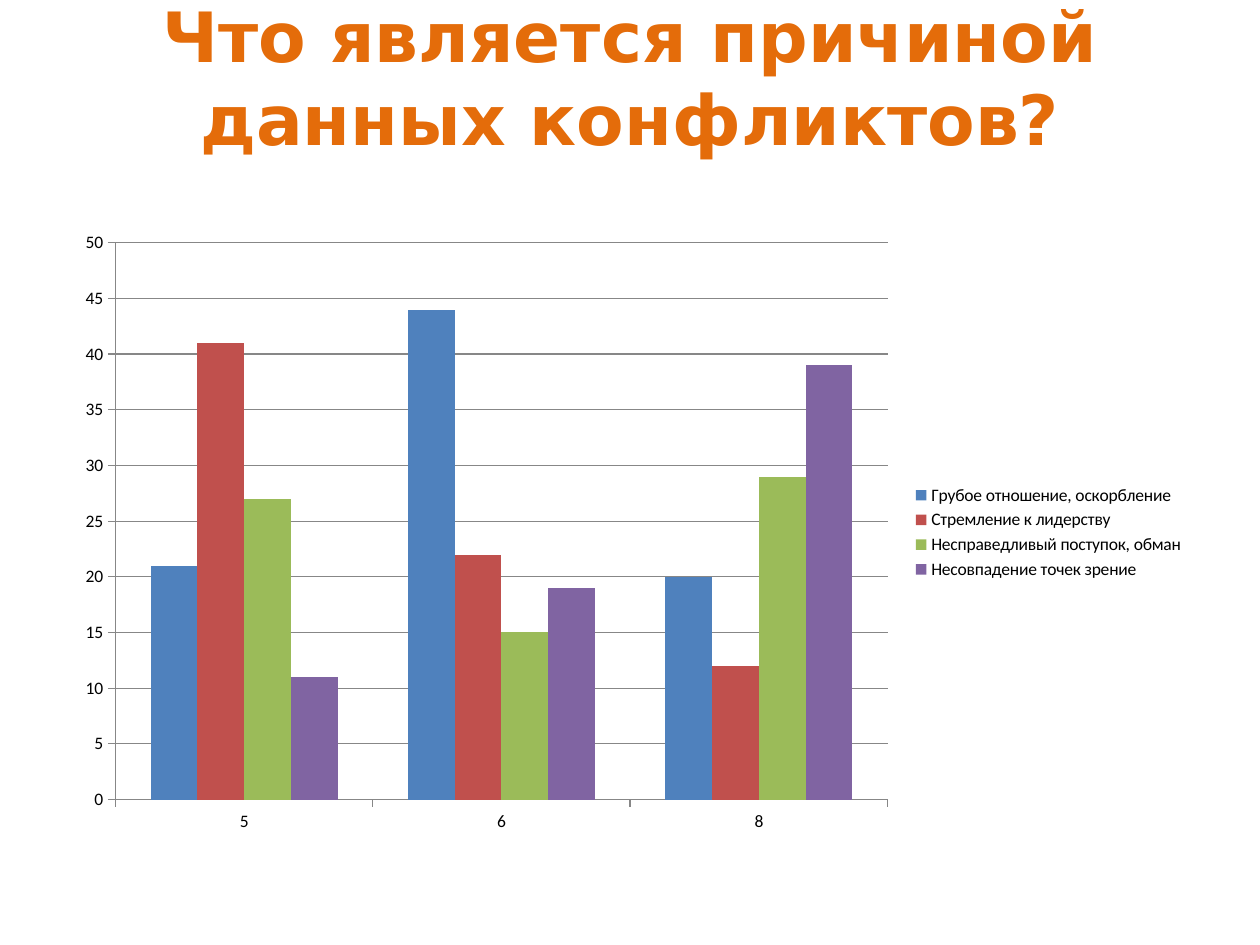
from pptx import Presentation
from pptx.chart.data import CategoryChartData
from pptx.dml.color import RGBColor
from pptx.enum.chart import XL_CHART_TYPE as CT, XL_LEGEND_POSITION as LP, XL_TICK_MARK as TM
from pptx.enum.text import MSO_ANCHOR as MA, PP_ALIGN as PA
from pptx.util import Pt


def rgb(value):
    return RGBColor.from_string(value)


def apply(obj, fmt):
    for name, value in fmt.items():
        setattr(obj, name, value)


class Deck:
    title_font = {"name": "DejaVu Sans", "size": Pt(39.6), "bold": True}
    chart_font = {"name": "Calibri", "size": Pt(10), "bold": False}
    title_color = "E46C0A"
    text_color = "000000"
    line_color = "878787"

    def __init__(self, width, height):
        self.prs = Presentation()
        apply(self.prs, {"slide_width": Pt(width), "slide_height": Pt(height)})
        self.s = self.prs.slides.add_slide(self.prs.slide_layouts[6])

    def title(self, text, box):
        tf = self.s.shapes.add_textbox(*map(Pt, box)).text_frame
        apply(tf, {"word_wrap": True, "vertical_anchor": MA.MIDDLE,
                   "margin_bottom": Pt(50)})
        p = tf.paragraphs[0]
        p.alignment = PA.CENTER
        r = p.add_run()
        r.text = text
        apply(r.font, self.title_font)
        r.font.color.rgb = rgb(self.title_color)

    def line(self, fmt):
        fmt.line.width = Pt(0.75)
        fmt.line.color.rgb = rgb(self.line_color)

    def columns(self, cats, series, box):
        data = CategoryChartData()
        data.categories = cats
        for name, _, values in series:
            data.add_series(name, values)
        chart = self.s.shapes.add_chart(CT.COLUMN_CLUSTERED, *map(Pt, box), data).chart
        apply(chart, {"has_title": False, "has_legend": True})
        apply(chart.font, self.chart_font)
        chart.font.color.rgb = rgb(self.text_color)
        apply(chart.legend, {"position": LP.RIGHT, "include_in_layout": False})
        plot = chart.plots[0]
        apply(plot, {"gap_width": 150, "overlap": 0, "vary_by_categories": False})
        for ser, (_, color, _) in zip(plot.series, series):
            ser.format.fill.solid()
            ser.format.fill.fore_color.rgb = rgb(color)
        for axis in (chart.category_axis, chart.value_axis):
            apply(axis, {"major_tick_mark": TM.OUTSIDE, "minor_tick_mark": TM.NONE})
            self.line(axis.format)
        apply(chart.value_axis, {"minimum_scale": 0, "maximum_scale": 50,
                                 "major_unit": 5, "has_major_gridlines": True})
        self.line(chart.value_axis.major_gridlines.format)


def main():
    deck = Deck(720, 540)
    deck.title("Что является причиной данных конфликтов?", (36, 21.6, 648, 90))
    deck.columns(
        ["5", "6", "8"],
        [
            ("Грубое отношение, оскорбление", "4F81BD", (21, 44, 20)),
            ("Стремление к лидерству", "C0504D", (41, 22, 12)),
            ("Несправедливый поступок, обман", "9BBB59", (27, 15, 29)),
            ("Несовпадение точек зрение", "8064A2", (11, 19, 39)),
        ],
        (36, 126, 648, 356.4),
    )
    deck.prs.save("out.pptx")


if __name__ == "__main__":
    main()
